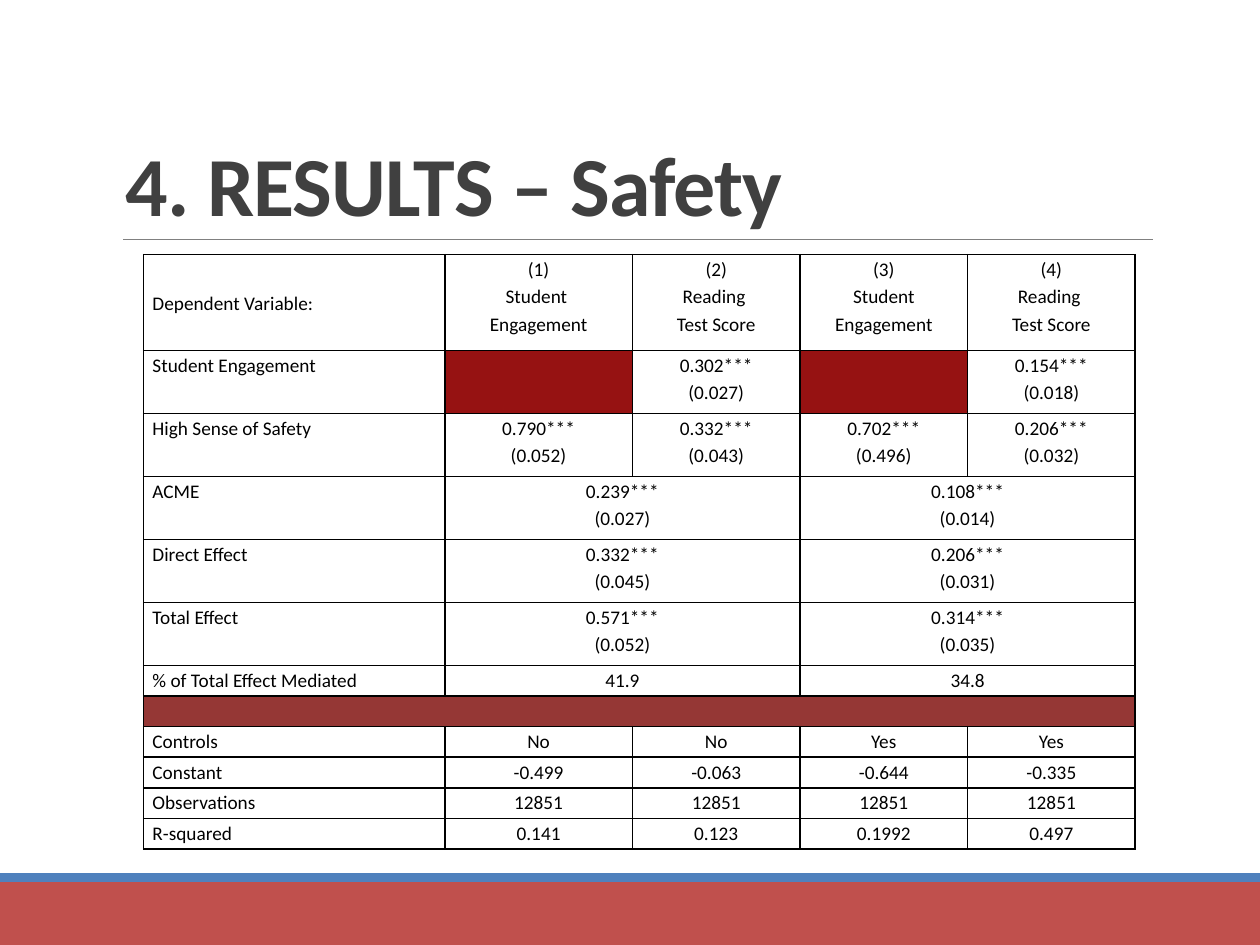
import lxml.etree
import pptx
import pptx.dml.color
import pptx.enum.shapes
import pptx.enum.text
import pptx.oxml.ns
import pptx.util

COLOURS = {
    "ink": "000000",
    "title": "404040",
    "rule": "808080",
    "band": "C0504D",
    "stripe": "4F81BD",
    "blocked": "961212",
    "divider": "953735",
}
GRID_COLUMNS, GRID_ROWS = 100, 75
COLUMN_WIDTHS = [23.9, 14.9, 13.3, 13.3, 13.3]
HEADER_HEIGHT, ESTIMATE_HEIGHT, TABLE_HEIGHT = 7.6, 5, 47.2
ESTIMATE_ROWS, SINGLE_ROWS = 5, 6
SINGLE_HEIGHT = (TABLE_HEIGHT - HEADER_HEIGHT - ESTIMATE_ROWS * ESTIMATE_HEIGHT) / SINGLE_ROWS
ROW_HEIGHTS = [HEADER_HEIGHT] + [ESTIMATE_HEIGHT] * ESTIMATE_ROWS + [SINGLE_HEIGHT] * SINGLE_ROWS

# A three-entry row spans each model pair; a one-entry row spans the whole table.
RESULTS = [
    ["Dependent Variable:", "(1)\nStudent \nEngagement", "(2)\nReading \nTest Score",
     "(3)\nStudent Engagement", "(4)\nReading \nTest Score"],
    ["Student Engagement", "", "0.302***\n(0.027)", "", "0.154***\n(0.018)"],
    ["High Sense of Safety", "0.790***\n(0.052)", "0.332***\n(0.043)",
     "0.702***\n(0.496)", "0.206***\n(0.032)"],
    ["ACME", "0.239***\n(0.027)", "0.108***\n(0.014)"],
    ["Direct Effect", "0.332***\n(0.045)", "0.206***\n(0.031)"],
    ["Total Effect", "0.571***\n(0.052)", "0.314***\n(0.035)"],
    ["% of Total Effect Mediated", "41.9", "34.8"],
    [""],
    ["Controls", "No", "No", "Yes", "Yes"],
    ["Constant", "-0.499", "-0.063", "-0.644", "-0.335"],
    ["Observations", "12851", "12851", "12851", "12851"],
    ["R-squared", "0.141", "0.123", "0.1992", "0.497"],
]
STARTS = {5: [0, 1, 2, 3, 4], 3: [0, 1, 3], 1: [0]}


def colour(name):
    return pptx.dml.color.RGBColor.from_string(COLOURS[name])


class SlideBuilder:
    def __init__(self, deck, font):
        self.font = font
        self.page = deck.slides.add_slide(deck.slide_layouts[6])
        self.column = deck.slide_width / GRID_COLUMNS
        self.row = deck.slide_height / GRID_ROWS

    def place(self, left, top, width, height):
        """Turn grid columns and rows into slide lengths."""
        return (round(left * self.column), round(top * self.row),
                round(width * self.column), round(height * self.row))

    def bar(self, area, fill):
        bar = self.page.shapes.add_shape(
            pptx.enum.shapes.MSO_SHAPE.RECTANGLE, *self.place(*area))
        bar.shadow.inherit = False
        bar.fill.solid()
        bar.fill.fore_color.rgb = colour(fill)
        bar.line.fill.background()

    def rule(self, left, right, level):
        start, height, end, _ = self.place(left, level, right, 0)
        line = self.page.shapes.add_connector(
            pptx.enum.shapes.MSO_CONNECTOR.STRAIGHT, start, height, end, height)
        line.line.color.rgb = colour("rule")
        line.line.width = pptx.util.Pt(0.5)
        lxml.etree.SubElement(line._element.spPr, pptx.oxml.ns.qn("a:effectLst"))

    def add_span(self, para, text, size, ink):
        span = para.add_run()
        span.text = text
        span.font.name = self.font
        span.font.size = pptx.util.Pt(size)
        span.font.color.rgb = colour(ink)
        return span

    def title(self, area, text):
        frame = self.page.shapes.add_textbox(*self.place(*area)).text_frame
        frame.word_wrap = True
        frame.vertical_anchor = pptx.enum.text.MSO_ANCHOR.BOTTOM
        para = frame.paragraphs[0]
        para.line_spacing = 0.85
        span = self.add_span(para, text, 48, "title")
        span.font.bold = True
        span.font._element.set("spc", "-50")

    def border(self, cell):
        properties = cell._tc.get_or_add_tcPr()
        for side in ("lnL", "lnR", "lnT", "lnB"):
            edge = lxml.etree.SubElement(
                properties, pptx.oxml.ns.qn("a:" + side), w=str(pptx.util.Pt(1)))
            fill = lxml.etree.SubElement(edge, pptx.oxml.ns.qn("a:solidFill"))
            lxml.etree.SubElement(fill, pptx.oxml.ns.qn("a:srgbClr"), val=COLOURS["ink"])

    def prepare_cell(self, cell):
        """Give a cell borders, no fill, tight margins and a small empty line."""
        self.border(cell)
        cell.fill.background()
        cell.margin_left = cell.margin_right = pptx.util.Inches(0.07)
        cell.margin_top = cell.margin_bottom = 0
        lxml.etree.SubElement(cell.text_frame.paragraphs[0]._p,
                              pptx.oxml.ns.qn("a:endParaRPr"), sz="1100")

    def write_cell(self, cell, text, centred):
        frame = cell.text_frame
        for index, line in enumerate(text.split("\n")):
            para = frame.add_paragraph() if index else frame.paragraphs[0]
            para.line_spacing = 1.15
            if centred:
                para.alignment = pptx.enum.text.PP_ALIGN.CENTER
            self.add_span(para, line, 11, "ink")

    def table(self, left, top, entries):
        area = self.place(left, top, sum(COLUMN_WIDTHS), TABLE_HEIGHT)
        table = self.page.shapes.add_table(len(entries), len(COLUMN_WIDTHS), *area).table
        table.first_row = table.horz_banding = False
        for column, width in zip(table.columns, COLUMN_WIDTHS):
            column.width = round(width * self.column)
        for row, height in zip(table.rows, ROW_HEIGHTS):
            row.height = round(height * self.row)
        for cell in table.iter_cells():
            self.prepare_cell(cell)
        for row, texts in enumerate(entries):
            starts = STARTS[len(texts)]
            ends = starts[1:] + [len(COLUMN_WIDTHS)]
            for start, end, text in zip(starts, ends, texts):
                cell = table.cell(row, start)
                if end - start > 1:
                    cell.merge(table.cell(row, end - 1))
                if text:
                    self.write_cell(cell, text, centred=start > 0)
                else:
                    cell.fill.solid()
                    cell.fill.fore_color.rgb = colour("blocked" if start else "divider")
        table.cell(0, 0).vertical_anchor = pptx.enum.text.MSO_ANCHOR.MIDDLE


def main():
    deck = pptx.Presentation()
    deck.slide_width = pptx.util.Inches(10)
    deck.slide_height = pptx.util.Inches(7.5)
    slide = SlideBuilder(deck, "Calibri")
    slide.bar((0, 70, GRID_COLUMNS, 5), "band")
    slide.bar((0, 69.3, GRID_COLUMNS, 0.7), "stripe")
    slide.rule(9.8, 91.5, 19)
    slide.title((9, 3.1, 82.5, 15.9), "4. RESULTS – Safety")
    slide.table(11.4, 20.2, RESULTS)
    deck.save("out.pptx")


if __name__ == "__main__":
    main()
